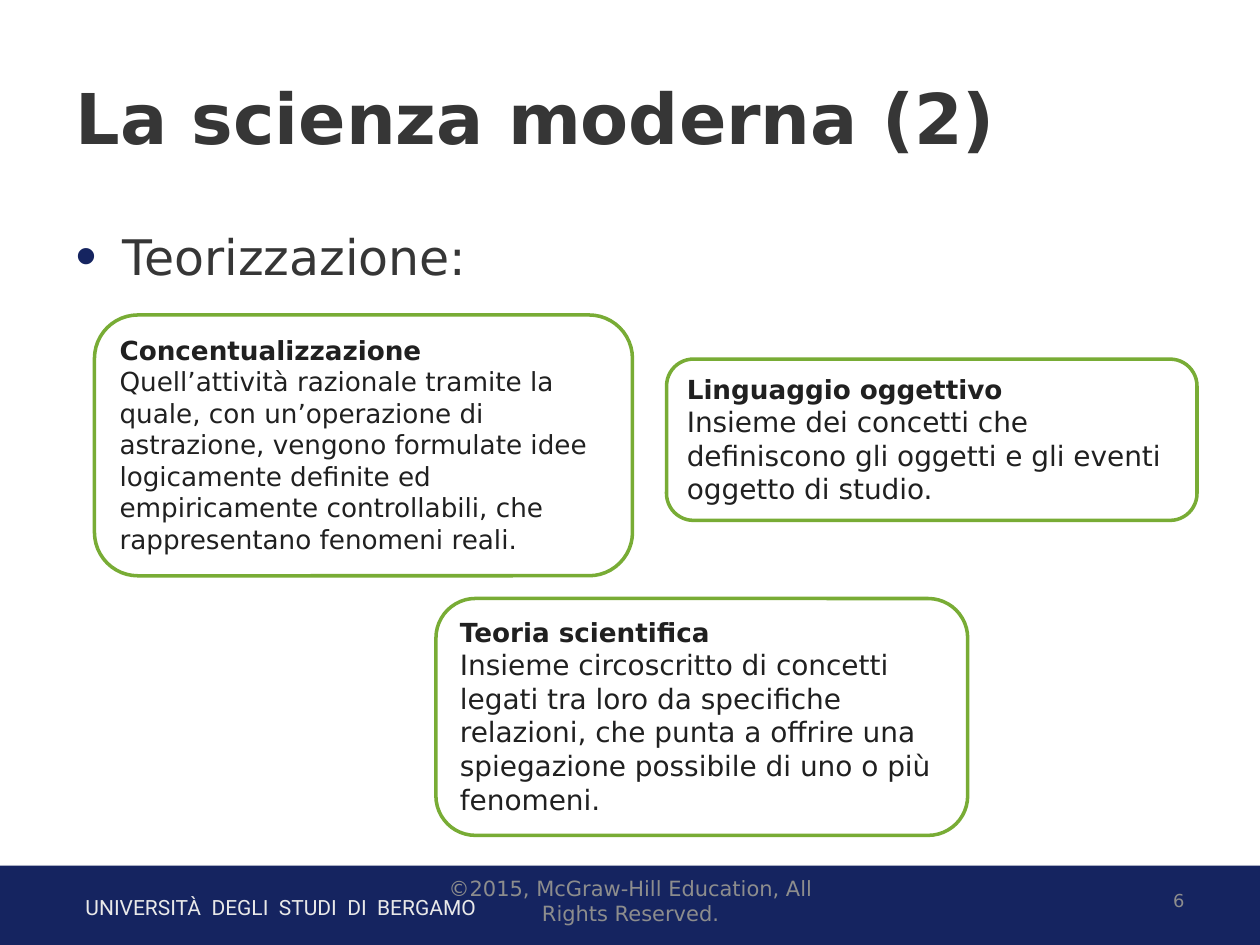
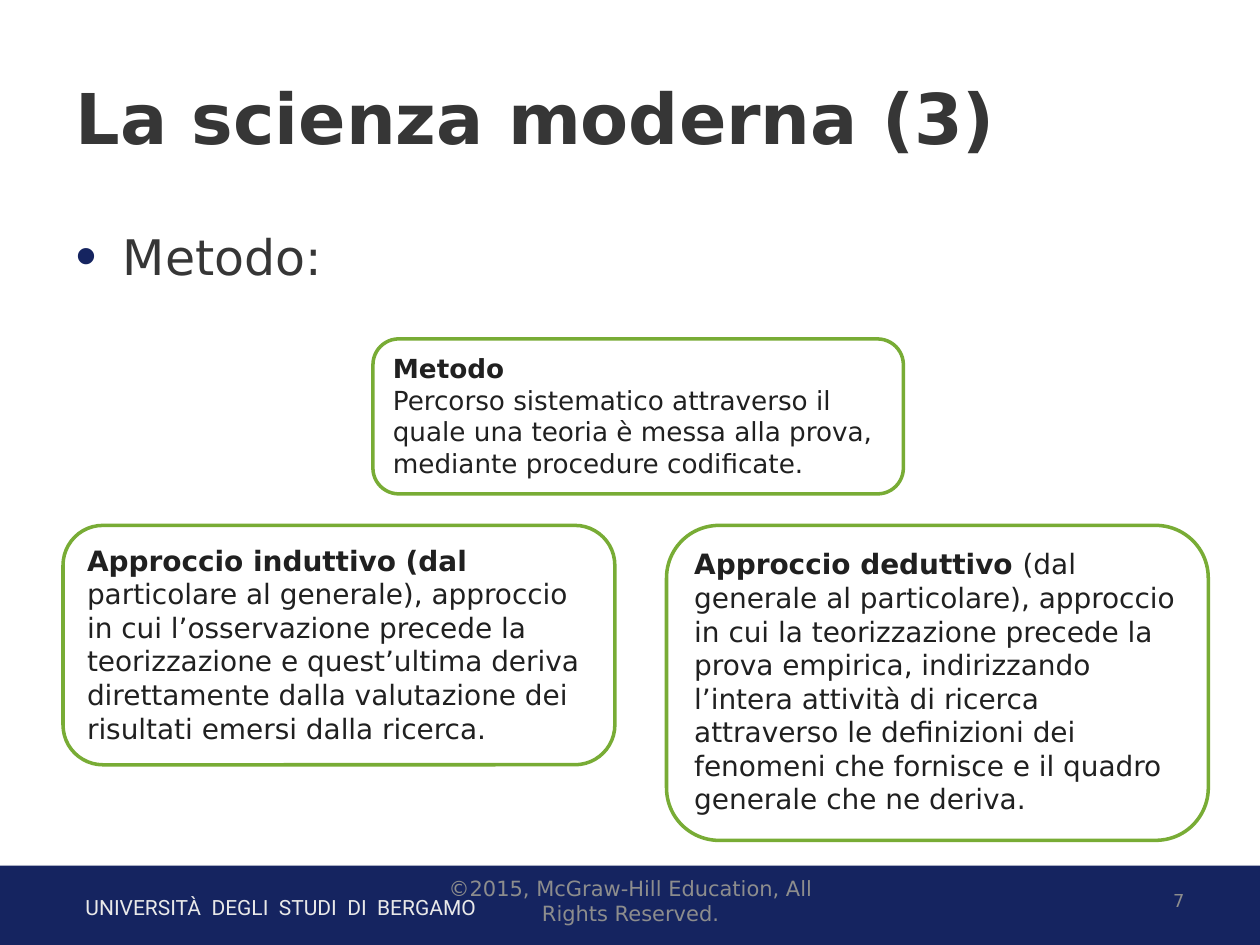
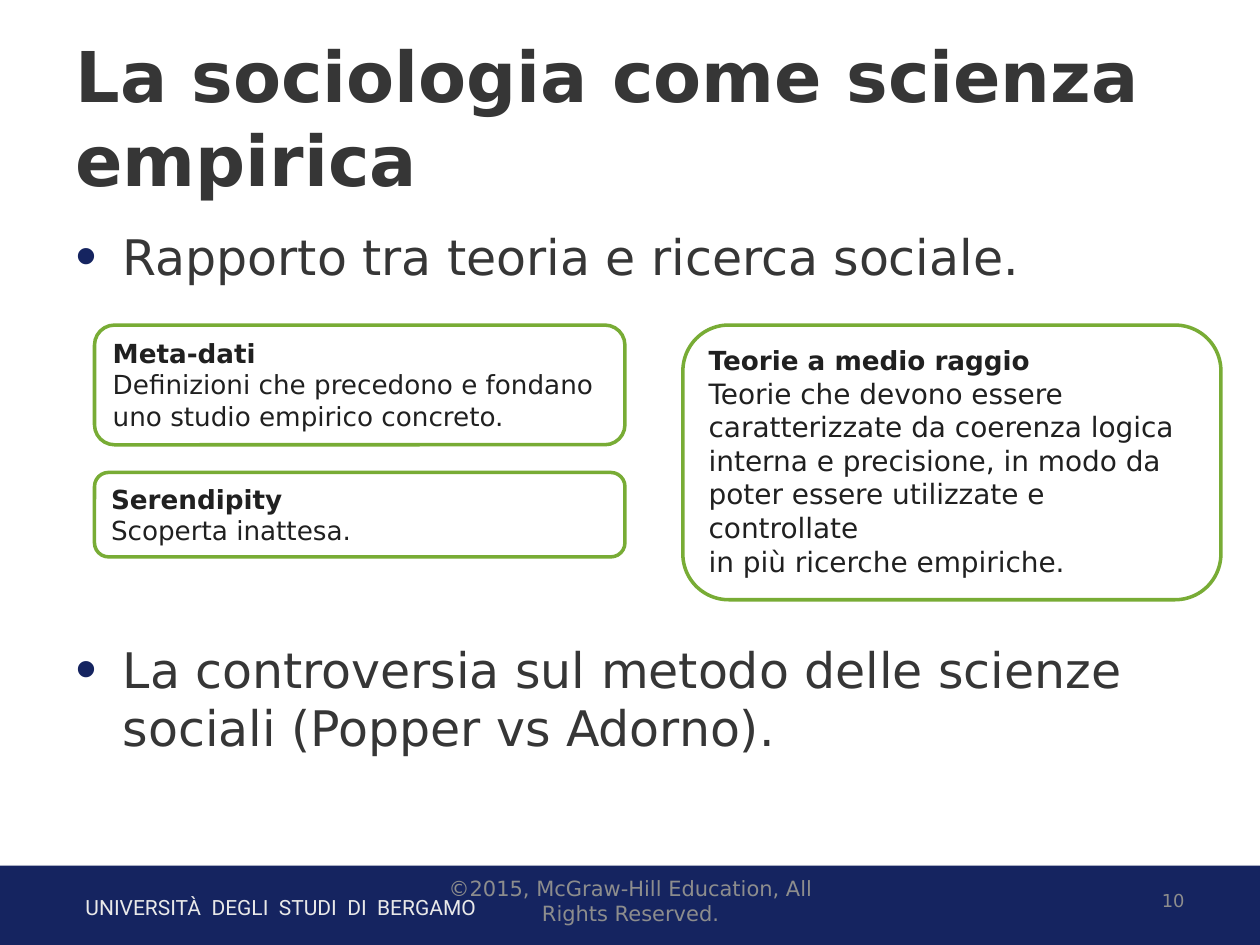
import lxml.etree
import pptx
import pptx.dml.color
import pptx.enum.shapes
import pptx.enum.text
import pptx.oxml.ns
import pptx.util

Inches = pptx.util.Inches
Pt = pptx.util.Pt
Align = pptx.enum.text.PP_ALIGN
Anchor = pptx.enum.text.MSO_ANCHOR
AutoSize = pptx.enum.text.MSO_AUTO_SIZE
Preset = pptx.enum.shapes.MSO_SHAPE

# Shared colours and text formats
NAVY, GREEN, WHITE = "152460", "78AC35", "FFFFFF"
INK, DARK, GREY, PALE = "202020", "363636", "8D8D8D", "E9E9E9"
SANS = "DejaVu Sans"
TITLE = {"name": SANS, "size": Pt(40), "bold": True, "color": DARK}
BULLET = {"name": SANS, "size": Pt(28), "color": DARK}
CARD = {"name": SANS, "color": INK}
UNIVERSITY = {"name": "Roboto", "size": Pt(12), "color": PALE}
COPYRIGHT = {"name": SANS, "size": Pt(12), "color": GREY}
NUMBER = {"name": SANS, "size": Pt(10.2), "color": GREY}


def rgb(value):
    return pptx.dml.color.RGBColor.from_string(value)


def add_span(para, text, style):
    span = para.add_run()
    span.text = text
    for name, value in style.items():
        if name == "color":
            span.font.color.rgb = rgb(value)
        else:
            setattr(span.font, name, value)


def add_element(parent, tag, **attributes):
    return lxml.etree.SubElement(parent, pptx.oxml.ns.qn(tag), attributes)


def place(shape, area):
    for name, value in zip(("left", "top", "width", "height"), area):
        setattr(shape, name, Inches(value))


def add_panel(page, preset, area, fill):
    panel = page.shapes.add_shape(preset, *map(Inches, area))
    panel.shadow.inherit = False
    panel.fill.solid()
    panel.fill.fore_color.rgb = rgb(fill)
    panel.line.fill.background()
    return panel


def add_label(page, area, text, style, align=Align.LEFT, anchor=Anchor.MIDDLE):
    frame = page.shapes.add_textbox(*map(Inches, area)).text_frame
    frame.word_wrap = True
    frame.vertical_anchor = anchor
    frame.paragraphs[0].alignment = align
    add_span(frame.paragraphs[0], text, style)


def add_footer(page, number):
    band = add_panel(page, Preset.RECTANGLE, (0, 6.87, 10, 0.68), NAVY)
    # Soft shadow below the band
    effects = band._element.spPr.find(pptx.oxml.ns.qn("a:effectLst"))
    shadow = add_element(effects, "a:outerShdw", blurRad=str(Pt(3.1)),
                         dist=str(Pt(1.8)), dir="5400000", rotWithShape="0")
    black = add_element(shadow, "a:srgbClr", val="000000")
    add_element(black, "a:alpha", val="35000")

    add_label(page, (0.58, 7.05, 5.82, 0.3),
              "UNIVERSITÀ  DEGLI  STUDI  DI  BERGAMO", UNIVERSITY, anchor=Anchor.TOP)
    add_label(page, (7.17, 6.95, 2.33, 0.4), str(number), NUMBER, Align.RIGHT)
    add_label(page, (3.42, 6.95, 3.17, 0.4),
              "©2015, McGraw-Hill Education, All Rights Reserved.", COPYRIGHT, Align.CENTER)


def add_bullet(para, text, space_before):
    para.space_before = Pt(space_before)
    properties = para._p.get_or_add_pPr()
    colour = add_element(properties, "a:buClr")
    add_element(colour, "a:srgbClr", val=NAVY)
    add_element(properties, "a:buSzPct", val="122000")
    add_element(properties, "a:buChar", char="•")
    add_span(para, text, BULLET)


def add_page(deck, number, title, bullets, gap=0):
    """Add a page with its footer, title and bullets, gap points apart."""
    page = deck.slides.add_slide(deck.slide_layouts[1])
    add_footer(page, number)

    heading = page.shapes.title
    place(heading, (0.5, 0.3, 9, 1.25))
    heading.text_frame.auto_size = AutoSize.NONE
    heading.text_frame.vertical_anchor = Anchor.MIDDLE
    heading.text_frame.paragraphs[0].alignment = Align.LEFT
    add_span(heading.text_frame.paragraphs[0], title, TITLE)

    body = page.placeholders[1]
    place(body, (0.5, 1.75, 9, 4.95))
    frame = body.text_frame
    frame.auto_size = AutoSize.NONE
    for index, text in enumerate(bullets):
        para = frame.add_paragraph() if index else frame.paragraphs[0]
        add_bullet(para, text, gap if index else 0)
    return page


def add_card(page, area, term, lines, size=15, term_size=15, term_note=""):
    """Add a rounded card: a bold term, then its definition."""
    card = add_panel(page, Preset.ROUNDED_RECTANGLE, area, WHITE)
    card.line.color.rgb = rgb(GREEN)
    card.line.width = Pt(2)
    frame = card.text_frame
    frame.word_wrap = True
    frame.auto_size = AutoSize.SHAPE_TO_FIT_TEXT
    frame.vertical_anchor = Anchor.TOP
    plain = {**CARD, "size": Pt(size), "bold": False}
    first = frame.paragraphs[0]
    first.alignment = Align.LEFT
    add_span(first, term, {**CARD, "size": Pt(term_size), "bold": True})
    if term_note:
        add_span(first, term_note, plain)
    for line in lines:
        para = frame.add_paragraph()
        para.alignment = Align.LEFT
        add_span(para, line, plain)


def add_theory(deck):
    page = add_page(deck, 6, "La scienza moderna (2)", ["Teorizzazione:"])
    add_card(page, (0.75, 2.5, 4.27, 2.07), "Concentualizzazione", [
        "Quell’attività razionale tramite la quale, con un’operazione di astrazione, "
        "vengono formulate idee logicamente definite ed empiricamente controllabili, "
        "che rappresentano fenomeni reali."])
    add_card(page, (5.29, 2.85, 4.21, 1.28), "Linguaggio oggettivo", [
        "Insieme dei concetti che definiscono gli oggetti e gli eventi "
        "oggetto di studio."], size=16)
    add_card(page, (3.46, 4.75, 4.22, 1.88), "Teoria scientifica", [
        "Insieme circoscritto di concetti legati tra loro da specifiche relazioni, "
        "che punta a offrire una spiegazione possibile di uno o più fenomeni."], size=16)


def add_method(deck):
    page = add_page(deck, 7, "La scienza moderna (3)", ["Metodo:"])
    add_card(page, (2.96, 2.69, 4.21, 1.23), "Metodo", [
        "Percorso sistematico attraverso il quale una teoria è messa alla prova, "
        "mediante procedure codificate."])
    add_card(page, (5.29, 4.17, 4.3, 2.5), "Approccio deduttivo ", [
        "generale al particolare), approccio",
        "in cui la teorizzazione precede la",
        "prova empirica, indirizzando l’intera attività di ricerca attraverso le "
        "definizioni dei fenomeni che fornisce e il quadro generale che ne deriva.",
    ], size=16, term_size=16, term_note="(dal")
    add_card(page, (0.5, 4.17, 4.38, 1.9), "Approccio induttivo (dal", [
        "particolare al generale), approccio",
        "in cui l’osservazione precede la teorizzazione e quest’ultima deriva",
        "direttamente dalla valutazione dei",
        "risultati emersi dalla ricerca.",
    ], size=16, term_size=16)


def add_sociology(deck):
    page = add_page(deck, 10, "La sociologia come scienza empirica", [
        "Rapporto tra teoria e ricerca sociale.",
        "La controversia sul metodo delle scienze sociali (Popper vs Adorno).",
    ], gap=202)
    add_card(page, (0.75, 2.58, 4.21, 0.95), "Meta-dati", [
        "Definizioni che precedono e fondano uno studio empirico concreto."])
    add_card(page, (5.42, 2.58, 4.27, 2.18), "Teorie a medio raggio", [
        "Teorie che devono essere",
        "caratterizzate da coerenza logica",
        "interna e precisione, in modo da",
        "poter essere utilizzate e controllate",
        "in più ricerche empiriche.",
    ], size=16)
    add_card(page, (0.75, 3.75, 4.21, 0.67), "Serendipity", ["Scoperta inattesa."])


def main():
    deck = pptx.Presentation()
    deck.slide_width, deck.slide_height = Inches(10), Inches(7.5)
    add_theory(deck)
    add_method(deck)
    add_sociology(deck)
    deck.save("out.pptx")


if __name__ == "__main__":
    main()
